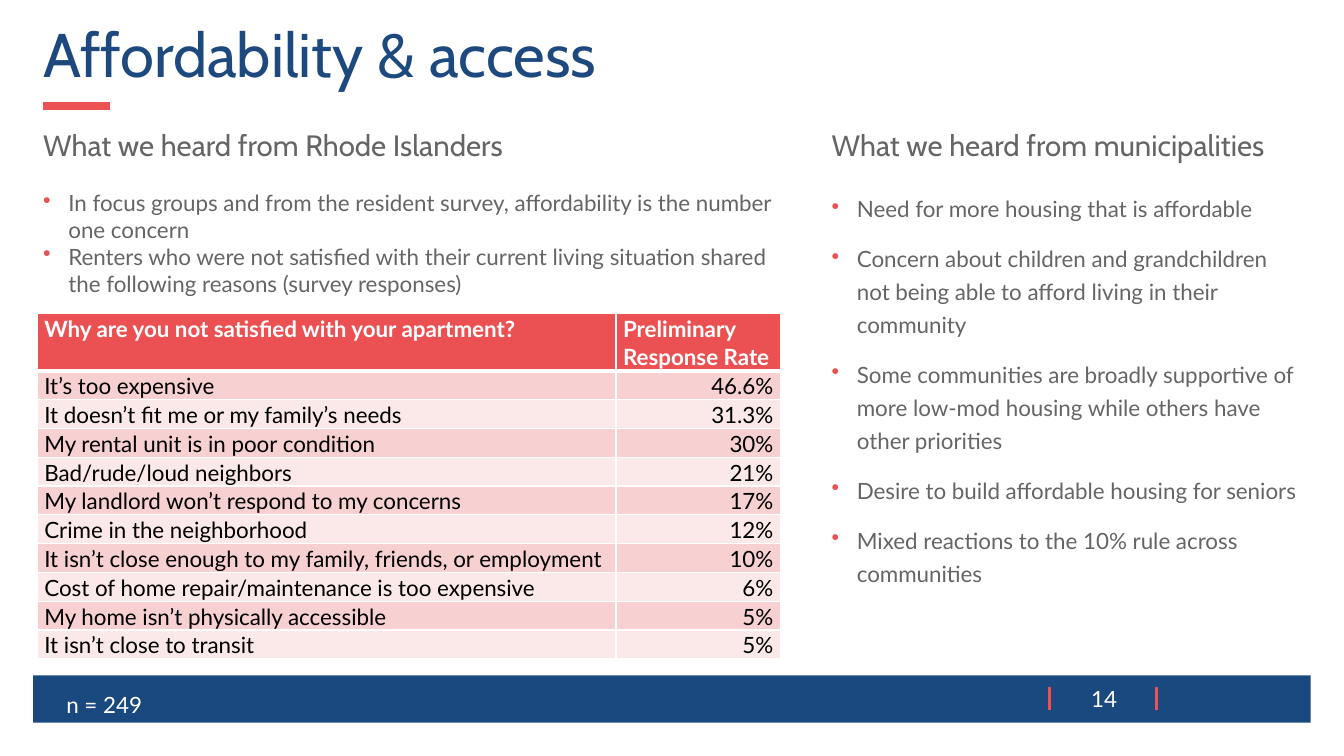
from lxml import etree
from pptx import Presentation
from pptx import util as u
from pptx.dml.color import RGBColor
from pptx.enum import shapes, text
from pptx.oxml import ns

PX = u.Inches(1) // 100
NAVY, TITLE, CORAL, RED = "1A497F", "1E497F", "EC5153", "EB5152"
GRAY, WHITE, BLACK = "656565", "FFFFFF", "000000"
BANDS = ["F7D0D1", "FBE9E9"]
LOOSE = 1.23

RESIDENTS = [
    "In focus groups and from the resident survey, affordability is the number one concern",
    "Renters who were not satisfied with their current living situation shared "
    "the following reasons (survey responses)",
]
MUNICIPALITIES = [
    "Need for more housing that is affordable",
    "Concern about children and grandchildren not being able to afford living in their community",
    "Some communities are broadly supportive of more low-mod housing while others have other priorities",
    "Desire to build affordable housing for seniors",
    "Mixed reactions to the 10% rule across communities",
]
REASONS = [
    ("Why are you not satisfied with your apartment?", "Preliminary Response Rate"),
    ("It’s too expensive", "46.6%"),
    ("It doesn’t fit me or my family’s needs", "31.3%"),
    ("My rental unit is in poor condition", "30%"),
    ("Bad/rude/loud neighbors", "21%"),
    ("My landlord won’t respond to my concerns", "17%"),
    ("Crime in the neighborhood", "12%"),
    ("It isn’t close enough to my family, friends, or employment", "10%"),
    ("Cost of home repair/maintenance is too expensive", "6%"),
    ("My home isn’t physically accessible", "5%"),
    ("It isn’t close to transit", "5%"),
]


def emu(*lengths):
    """Turn px lengths into EMU."""
    return [n * PX for n in lengths]


def rgb(color):
    """Turn a hex string into a colour."""
    return RGBColor.from_string(color)


def sub(parent, tag, **attrs):
    """Append a DrawingML element to a parent."""
    return etree.SubElement(parent, ns.qn(tag), attrs)


def style(p, size, color, font="Lato", bold=False, spacing=None, align=None):
    """Set the font, line spacing and alignment of a paragraph."""
    p.font.size, p.font.name, p.font.bold = u.Pt(size), font, bold
    p.font.color.rgb = rgb(color)
    p.line_spacing, p.alignment = spacing, align


def add_bullet(p):
    """Give a paragraph a coloured bullet with a hanging indent."""
    pPr = p._p.get_or_add_pPr()
    pPr.set("marL", str(25 * PX))
    pPr.set("indent", str(-25 * PX))
    sub(sub(pPr, "a:buClr"), "a:srgbClr", val=RED)
    sub(pPr, "a:buChar", char="•")


def add_text(s, box, lines, size, color, bullets=False, gap=0, middle=False, **look):
    """Add a text box with one paragraph per line."""
    tf = s.shapes.add_textbox(*emu(*box)).text_frame
    tf.word_wrap = True
    if middle:
        tf.vertical_anchor = text.MSO_ANCHOR.MIDDLE
    for i, line in enumerate(lines):
        p = tf.add_paragraph() if i else tf.paragraphs[0]
        p.text = line
        if i and gap:
            p.space_before = u.Pt(gap)
        if gap:
            p.space_after = u.Pt(gap)
        if bullets:
            add_bullet(p)
        style(p, size, color, **look)


def add_line(s, x1, y1, x2, y2, width):
    """Add a straight coral line."""
    sp = s.shapes.add_connector(shapes.MSO_CONNECTOR.STRAIGHT, *emu(x1, y1, x2, y2))
    sp.line.color.rgb = rgb(CORAL)
    sp.line.width = u.Pt(width)
    sub(sp._element.spPr, "a:effectLst")


def add_bar(s, box, color):
    """Add a plain filled rectangle."""
    sp = s.shapes.add_shape(shapes.MSO_SHAPE.RECTANGLE, *emu(*box))
    sp.shadow.inherit = False
    sp.fill.solid()
    sp.fill.fore_color.rgb = rgb(color)
    sp.line.fill.background()


def set_borders(cell, bottom):
    """Draw white borders around a cell."""
    tcPr = cell._tc.get_or_add_tcPr()
    for side, width in zip("LRTB", (1, 1, 1, bottom)):
        ln = sub(tcPr, f"a:ln{side}", w=str(u.Pt(width)))
        sub(sub(ln, "a:solidFill"), "a:srgbClr", val=WHITE)


def add_table(s, x, y, widths, row_height, rows):
    """Add a banded table with a header row."""
    frame = s.shapes.add_table(len(rows), len(widths),
                               *emu(x, y, sum(widths), row_height * len(rows)))
    table = frame.table
    for column, width in zip(table.columns, widths):
        column.width = width * PX
    for i, row in enumerate(rows):
        table.rows[i].height = row_height * PX
        header = i == 0
        for j, value in enumerate(row):
            cell = table.cell(i, j)
            cell.margin_left = cell.margin_right = 7 * PX
            cell.margin_top = cell.margin_bottom = 0
            set_borders(cell, 3 if header else 1)
            cell.fill.solid()
            cell.fill.fore_color.rgb = rgb(RED if header else BANDS[(i - 1) % 2])
            p = cell.text_frame.paragraphs[0]
            p.text = value
            style(p, 16, WHITE if header else BLACK, bold=header, spacing=1.07,
                  align=text.PP_ALIGN.RIGHT if j and not header else None)


def main():
    """Build the slide and save it."""
    prs = Presentation()
    prs.slide_width, prs.slide_height = emu(1333, 750)
    s = prs.slides.add_slide(prs.slide_layouts[6])
    add_line(s, 43, 105, 109, 105, 6)
    add_bar(s, (33, 670, 1267, 47), NAVY)
    for x in (1041, 1147):
        add_line(s, x, 682, x, 704, 2.25)
    add_text(s, (33, 19, 1267, 77), ["Affordability & access"], 44, TITLE,
             font="Cabin", spacing=0.9)
    add_text(s, (1063, 675, 64, 37), ["14"], 16, WHITE, middle=True,
             align=text.PP_ALIGN.CENTER)
    for x, width, who in ((33, 606, "Rhode Islanders"), (815, 485, "municipalities")):
        add_text(s, (x, 113, width, 93), [f"What we heard from {who}"], 21, GRAY,
                 font="Cabin", gap=6, spacing=LOOSE)
    add_text(s, (33, 183, 744, 202), RESIDENTS, 16, GRAY, bullets=True)
    add_text(s, (815, 183, 485, 451), MUNICIPALITIES, 16, GRAY, bullets=True,
             gap=6, spacing=LOOSE)
    add_table(s, 37, 311, (574, 163), 20, REASONS)
    add_text(s, (56, 675, 726, 40), ["n = 249"], 16, WHITE, spacing=LOOSE)
    prs.save("out.pptx")


if __name__ == "__main__":
    main()
